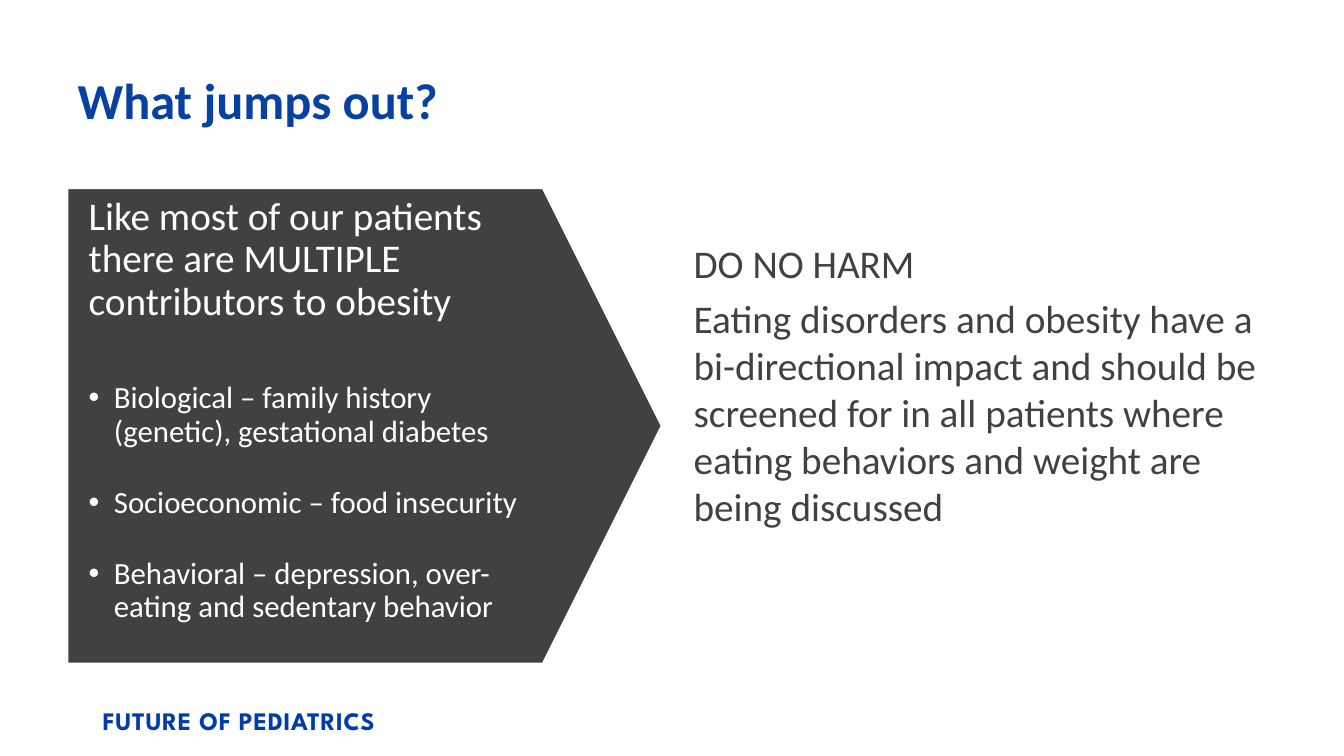
from dataclasses import dataclass

from lxml.etree import SubElement
from pptx import Presentation
from pptx.dml.color import RGBColor
from pptx.enum.shapes import MSO_SHAPE
from pptx.enum.text import MSO_ANCHOR, MSO_AUTO_SIZE, PP_ALIGN
from pptx.oxml.ns import qn
from pptx.util import Inches, Pt


@dataclass(frozen=True)
class Theme:
    """Colours, fonts and type sizes of the slide."""
    title_blue = RGBColor(0x08, 0x41, 0xA2)
    footer_blue = RGBColor(0x00, 0x3D, 0xA6)
    dark = RGBColor(0x41, 0x41, 0x42)
    white = RGBColor(0xFF, 0xFF, 0xFF)
    body_font = "Calibri"
    footer_font = "League Spartan"
    title_size = Pt(36)
    lead_size = Pt(28)
    bullet_size = Pt(22)
    footer_size = Pt(18)


THEME = Theme()
LEAD = "Like most of our patients there are MULTIPLE contributors to obesity"
CONTRIBUTORS = [
    "Biological – family history (genetic), gestational diabetes",
    "Socioeconomic – food insecurity",
    "Behavioral – depression, over-eating and sedentary behavior",
]
STATEMENTS = [
    "DO NO HARM",
    "Eating disorders and obesity have a bi-directional impact and should be "
    "screened for in all patients where eating behaviors and weight are being discussed",
]


def place(shape, left, top, width, height):
    """Move and size a shape, in inches."""
    shape.left, shape.top = Inches(left), Inches(top)
    shape.width, shape.height = Inches(width), Inches(height)


def prepare_frame(shape, anchor=MSO_ANCHOR.TOP):
    """Give a shape a wrapping, fixed-size text frame and return it."""
    frame = shape.text_frame
    frame.word_wrap = True
    frame.auto_size = MSO_AUTO_SIZE.NONE
    frame.vertical_anchor = anchor
    return frame


def style_font(paragraph, size, color, name=THEME.body_font, bold=False):
    """Set the font of a whole paragraph."""
    font = paragraph.font
    font.name, font.size, font.bold = name, size, bold
    font.color.rgb = color


def set_bullet(paragraph, character=None, indent=0):
    """Give a paragraph a hanging bullet, or none at all."""
    properties = paragraph._p.get_or_add_pPr()
    properties.set("marL", str(Inches(indent)))
    properties.set("indent", str(-Inches(indent)))
    if character:
        SubElement(properties, qn("a:buFont")).set("typeface", "Arial")
        SubElement(properties, qn("a:buChar")).set("char", character)
    else:
        SubElement(properties, qn("a:buNone"))


def add_paragraphs(frame, texts):
    """Fill a text frame with one paragraph per text and return them."""
    frame.text = "\n".join(texts)
    return frame.paragraphs


def build_title(title, left, top, width, height):
    """Place and format the slide title."""
    place(title, left, top, width, height)
    frame = prepare_frame(title, MSO_ANCHOR.MIDDLE)
    frame.text = "What jumps out?"
    paragraph = frame.paragraphs[0]
    paragraph.alignment = PP_ALIGN.LEFT
    paragraph.line_spacing = 1.2
    style_font(paragraph, THEME.title_size, THEME.title_blue, bold=True)


def build_contributors(slide, body, left, top, width, height):
    """Draw the pentagon arrow with the list of contributors on it."""
    arrow = slide.shapes.add_shape(
        MSO_SHAPE.PENTAGON, Inches(left), Inches(top), Inches(width), Inches(height))
    arrow.adjustments[0] = 0.25
    arrow.shadow.inherit = False
    arrow.fill.solid()
    arrow.fill.fore_color.rgb = THEME.dark
    arrow.line.color.rgb = THEME.white
    arrow.line.width = Pt(1)
    body.element.addprevious(arrow.element)

    place(body, left, top, width - height / 8, height)
    frame = prepare_frame(body)
    frame.margin_left, frame.margin_right = Inches(0.21), Inches(0.83)
    frame.margin_top = frame.margin_bottom = Inches(0.08)
    lead, *bullets = add_paragraphs(frame, [LEAD, *CONTRIBUTORS])
    set_bullet(lead)
    lead.space_after = Pt(42)
    style_font(lead, THEME.lead_size, THEME.white)
    for bullet in bullets:
        bullet.level = 1
        set_bullet(bullet, "•", 0.25)
        bullet.space_after = Pt(27)
        style_font(bullet, THEME.bullet_size, THEME.white)
    bullets[-1].space_after = Pt(0)
    for paragraph in frame.paragraphs:
        paragraph.line_spacing = 0.9
        paragraph.space_before = Pt(0)


def build_statements(body, left, top, width, height):
    """Place the plain statements at the right."""
    place(body, left, top, width, height)
    for index, paragraph in enumerate(add_paragraphs(prepare_frame(body), STATEMENTS)):
        set_bullet(paragraph)
        paragraph.space_before = Pt(5.6 if index else 0)
        style_font(paragraph, THEME.lead_size, THEME.dark)


def build_footer(slide, left, top, width, height):
    """Add the series name at the foot of the slide."""
    footer = slide.shapes.add_textbox(
        Inches(left), Inches(top), Inches(width), Inches(height))
    frame = prepare_frame(footer)
    frame.text = "FUTURE OF PEDIATRICS"
    paragraph = frame.paragraphs[0]
    style_font(paragraph, THEME.footer_size, THEME.footer_blue, THEME.footer_font, True)
    paragraph.runs[0]._r.get_or_add_rPr().set("spc", "50")


def main():
    """Build the slide and save it."""
    presentation = Presentation()
    presentation.slide_width, presentation.slide_height = Inches(13.33), Inches(7.5)
    slide = presentation.slides.add_slide(
        presentation.slide_layouts.get_by_name("Two Content"))
    build_title(slide.shapes.title, 0.67, 0.3, 12, 1.25)
    build_contributors(slide, slide.placeholders[1], 0.67, 1.87, 5.89, 4.71)
    build_statements(slide.placeholders[2], 6.78, 2.32, 5.89, 4.38)
    build_footer(slide, 0.92, 6.95, 3, 0.4)
    presentation.save("out.pptx")


if __name__ == "__main__":
    main()
